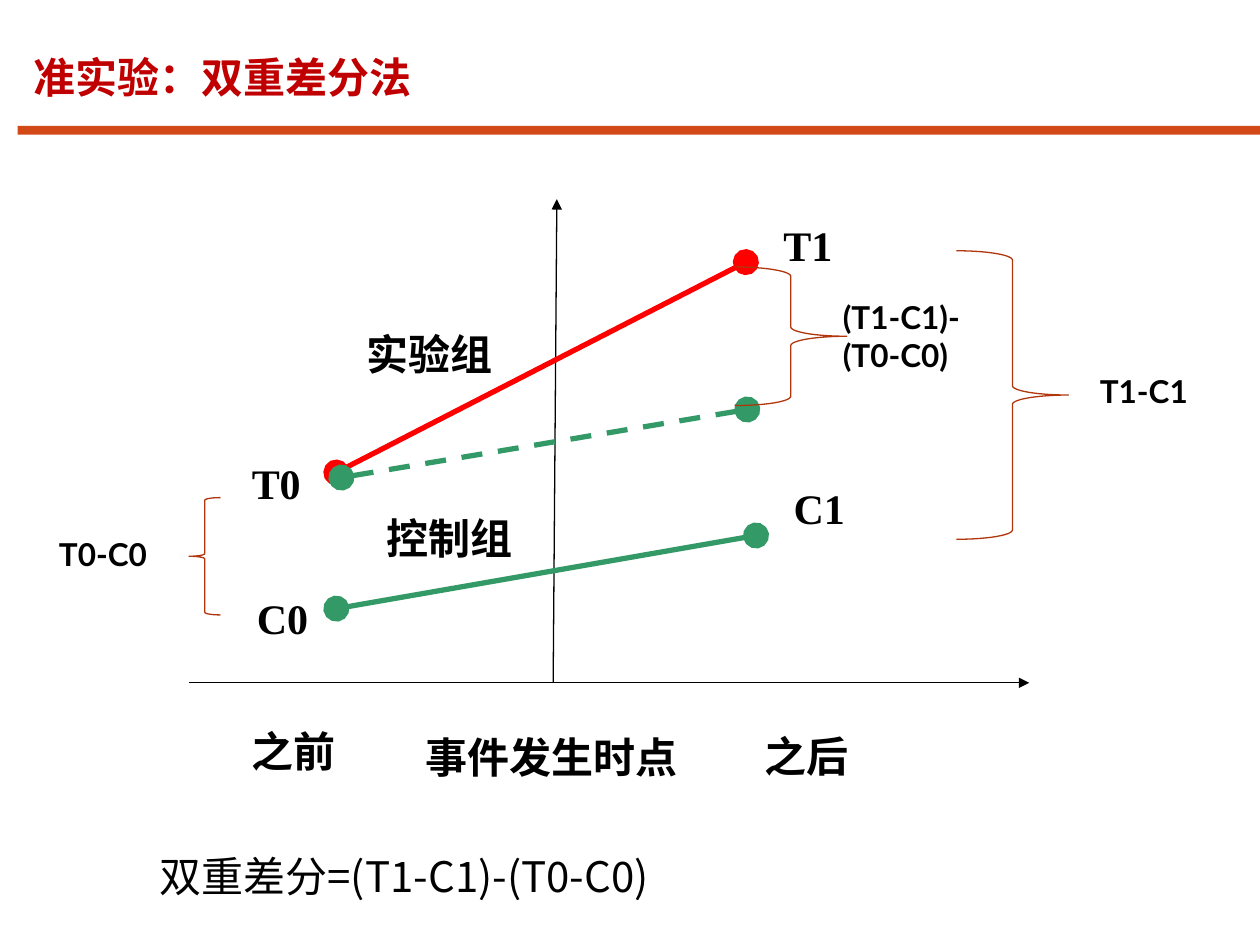
from lxml import etree
from pptx import Presentation
from pptx.dml.color import RGBColor
from pptx.enum import dml, shapes, text
from pptx.oxml.ns import qn
from pptx.util import Pt

BLACK = RGBColor(0x00, 0x00, 0x00)
TITLE_RED = RGBColor(0xC0, 0x00, 0x00)
RULE_ORANGE = RGBColor(0xD3, 0x48, 0x17)
BRACE_BROWN = RGBColor(0xB1, 0x36, 0x0B)
TREATED_RED = RGBColor(0xFF, 0x00, 0x00)
CONTROL_GREEN = RGBColor(0x33, 0x99, 0x66)

CJK, ARIAL, TIMES, LATO = "Noto Sans CJK SC", "Arial", "Times New Roman", "Lato"

# Headings: wording, (left, top, width, height), colour, bold, anchor, bottom inset
HEADINGS = [
    ("准实验：双重差分法", (12.2, 23.8, 684, 41.8), TITLE_RED, True,
     text.MSO_ANCHOR.BOTTOM, 7.2),
    ("双重差分=(T1-C1)-(T0-C0)", (84.2, 482.4, 642, 41.8), BLACK, False,
     text.MSO_ANCHOR.TOP, 3.6),
]

# Labels by (font, size, height): wording, left, top, width
LABELS = {
    (ARIAL, 24, 36): [
        ("之前", 136.8, 411.1, 63.4),
        ("事件发生时点", 236.2, 414.7, 160.6),
        ("之后", 429.8, 414, 63.4),
        ("实验组", 202.3, 184.3, 110.9),
        ("控制组", 213.8, 289.4, 87.9),
    ],
    (TIMES, 24, 36): [
        ("T0", 136.8, 257.8, 44),
        ("T1", 440.6, 121.7, 49.7),
        ("C0", 139.7, 334.8, 57.6),
        ("C1", 446.4, 272.2, 44),
    ],
    (LATO, 18, 28.8): [
        ("T0-C0", 26.6, 302.4, 69.1),
        ("T1-C1", 621.4, 208.8, 69.1),
    ],
    (LATO, 18, 51.1): [("(T1-C1)-(T0-C0)", 474.5, 167, 113.8)],
}

# Axes and trends: start, end
AXES = [((108, 390.2), (588.2, 390.2)), ((316.1, 390.2), (318.2, 113.8))]
TRENDS = [
    ((192.2, 347.8), (432, 306), CONTROL_GREEN, False),
    ((192.2, 270), (426.2, 149.8), TREATED_RED, False),
    ((195.1, 272.9), (427, 234), CONTROL_GREEN, True),
]

# Braces: preset, (left, top, width, height)
BRACES = [
    (shapes.MSO_SHAPE.LEFT_BRACE, (108, 284.4, 18, 67)),
    (shapes.MSO_SHAPE.RIGHT_BRACE, (419.8, 152.6, 64.1, 79.2)),
    (shapes.MSO_SHAPE.RIGHT_BRACE, (546.5, 143.3, 64.1, 164.9)),
]


def points(values):
    return [Pt(value) for value in values]


def add_text(page, wording, place, font, size, bold=True, colour=BLACK):
    box = page.shapes.add_textbox(*points(place))
    box.text_frame.word_wrap = True
    para = box.text_frame.paragraphs[0]
    span = para.add_run()
    span.text = wording
    span.font.name, span.font.size, span.font.bold = font, Pt(size), bold
    span.font.color.rgb = colour
    east_asian = etree.SubElement(span.font._element, qn("a:ea"))
    east_asian.set("typeface", CJK)
    return box.text_frame


def add_line(page, start, end, colour, width, ends, dashed=False):
    line = page.shapes.add_connector(
        shapes.MSO_CONNECTOR.STRAIGHT, *points(start + end))
    line.line.color.rgb = colour
    line.line.width = Pt(width)
    if dashed:
        line.line.dash_style = dml.MSO_LINE.DASH
    outline = line.line._get_or_add_ln()
    for tag, kind, scale in ends:
        etree.SubElement(outline, qn(tag), type=kind, w=scale, len=scale)
    etree.SubElement(line._element.spPr, qn("a:effectLst"))


def add_preset(page, preset, place):
    shape = page.shapes.add_shape(preset, *points(place))
    shape.shadow.inherit = False
    return shape


deck = Presentation()
deck.slide_width, deck.slide_height = Pt(720), Pt(540)
page = deck.slides.add_slide(deck.slide_layouts[6])

# Rule under the title
rule = add_preset(page, shapes.MSO_SHAPE.RECTANGLE, (10.1, 72, 709.9, 5))
rule.fill.solid()
rule.fill.fore_color.rgb = RULE_ORANGE
rule.line.fill.background()

# Title and formula
for wording, place, colour, bold, anchor, inset in HEADINGS:
    frame = add_text(page, wording, place, CJK, 24, bold, colour)
    frame.vertical_anchor = anchor
    frame.margin_bottom = Pt(inset)

# Axes and trend lines
for start, end in AXES:
    add_line(page, start, end, BLACK, 0.75, [("a:tailEnd", "triangle", "med")])
dots = [("a:headEnd", "oval", "lg"), ("a:tailEnd", "oval", "lg")]
for start, end, colour, dashed in TRENDS:
    add_line(page, start, end, colour, 3, dots, dashed)

# Difference braces
for preset, place in BRACES:
    brace = add_preset(page, preset, place)
    brace.fill.background()
    brace.line.color.rgb = BRACE_BROWN
    brace.line.width = Pt(0.75)

# Labels
for (font, size, height), labels in LABELS.items():
    for wording, left, top, width in labels:
        add_text(page, wording, (left, top, width, height), font, size)

deck.save("out.pptx")
